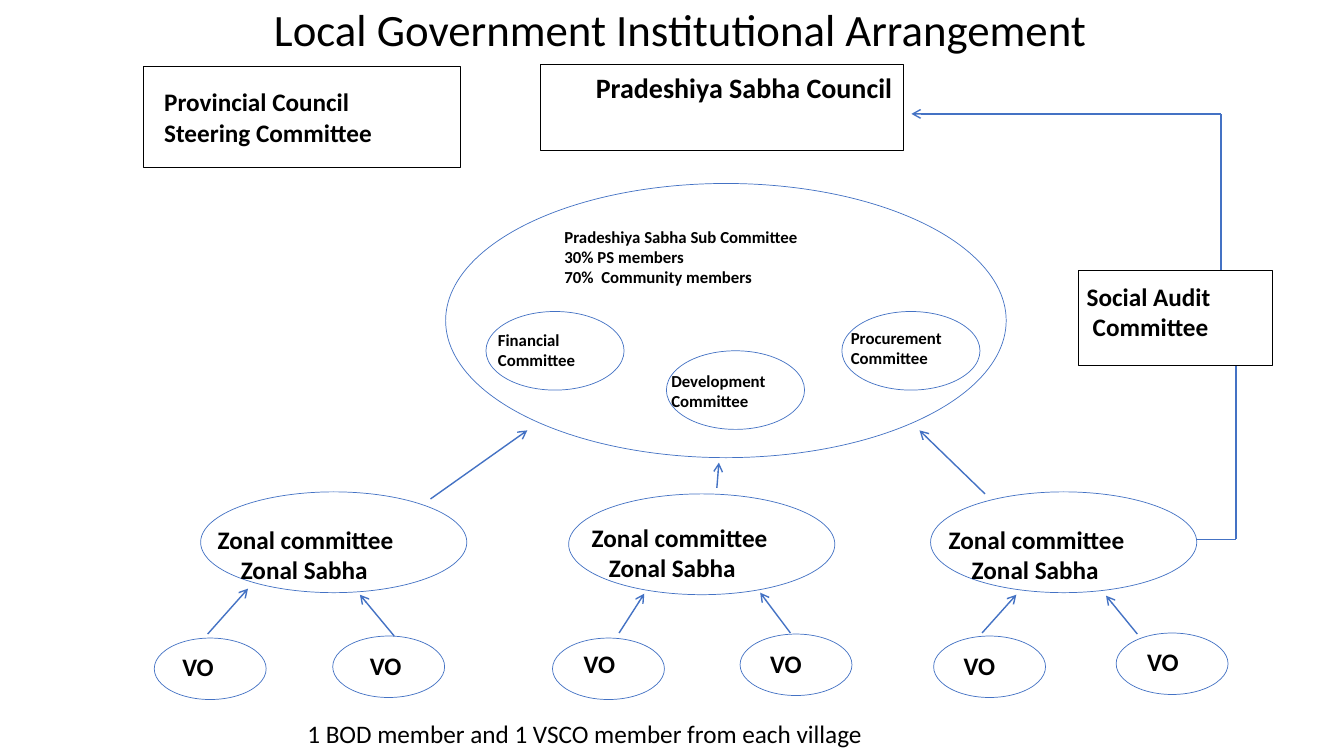
"""Build the local government institutional arrangement slide."""
from lxml import etree
from pptx import Presentation
from pptx.dml.color import RGBColor
from pptx.enum.shapes import MSO_CONNECTOR, MSO_SHAPE
from pptx.enum.text import MSO_ANCHOR, MSO_AUTO_SIZE, PP_ALIGN
from pptx.oxml.ns import qn
from pptx.util import Inches, Pt

BLACK = RGBColor(0x00, 0x00, 0x00)
BLUE = RGBColor(0x44, 0x72, 0xC4)
RECT, OVAL = MSO_SHAPE.RECTANGLE, MSO_SHAPE.OVAL
STRAIGHT = MSO_CONNECTOR.STRAIGHT
LEFT, CENTER = PP_ALIGN.LEFT, PP_ALIGN.CENTER
TOP, BOTTOM = MSO_ANCHOR.TOP, MSO_ANCHOR.BOTTOM
GROW, FIXED = MSO_AUTO_SIZE.SHAPE_TO_FIT_TEXT, MSO_AUTO_SIZE.NONE

prs = Presentation()
prs.slide_width, prs.slide_height = Inches(13.33), Inches(7.5)
slide = prs.slides.add_slide(prs.slide_layouts[6])


def add_text(text, box, size=18, bold=True, align=LEFT, anchor=TOP,
             wrap=False, fit=GROW, spacing=1.0, last_indent=0):
    frame = slide.shapes.add_textbox(*map(Inches, box)).text_frame
    frame.text = text
    frame.word_wrap = wrap
    frame.auto_size = fit
    frame.vertical_anchor = anchor
    for paragraph in frame.paragraphs:
        paragraph.alignment = align
        paragraph.line_spacing = spacing
        font = paragraph.runs[0].font
        font.name, font.size, font.bold = "Calibri", Pt(size), bold
        font.color.rgb = BLACK
    if last_indent:
        properties = frame.paragraphs[-1]._p.get_or_add_pPr()
        properties.set("marL", str(Inches(last_indent)))
        properties.set("indent", "0")


def add_outline(kind, box, color):
    outline = slide.shapes.add_shape(kind, *map(Inches, box))
    outline.shadow.inherit = False
    outline.fill.background()
    outline.line.color.rgb = color
    outline.line.width = Pt(0.5)


def add_link(start, end, arrow=True):
    link = slide.shapes.add_connector(STRAIGHT, *map(Inches, start + end))
    link.line.color.rgb = BLUE
    link.line.width = Pt(1)
    if arrow:
        etree.SubElement(link.line._get_or_add_ln(), qn("a:tailEnd"), type="arrow")
    etree.SubElement(link._element.spPr, qn("a:effectLst"))


add_text("Local Government Institutional Arrangement", (0.17, 0, 13.16, 0.61),
         size=32, bold=False, align=CENTER, anchor=BOTTOM, wrap=True,
         fit=FIXED, spacing=0.9)

for council_box in [(1.42, 0.66, 3.15, 1), (5.36, 0.64, 3.6, 0.85), (10.7, 2.68, 1.92, 0.95)]:
    add_outline(RECT, council_box, BLACK)
add_text("Provincial Council\nSteering Committee", (1.53, 0.81, 2.29, 0.71))
add_text("Pradeshiya Sabha Council", (5.8, 0.65, 3.16, 0.44), size=20, align=CENTER, wrap=True)
add_text("Social Audit\nCommittee", (10.68, 2.74, 1.44, 0.71), last_indent=0.06)

add_outline(OVAL, (4.42, 1.82, 5.56, 2.72), BLUE)
add_text("Pradeshiya Sabha Sub Committee\n30% PS members\n70%  Community members",
         (5.5, 2.2, 2.55, 0.71), size=12)

sub_committees = [
    ("Financial", 4.82, 3.09, (4.84, 3.22, 0.98, 0.5)),
    ("Development", 6.61, 3.48, (6.56, 3.63, 1.15, 0.5)),
    ("Procurement", 8.35, 3.09, (8.34, 3.2, 1.12, 0.5)),
]
for duty, left, top, label_box in sub_committees:
    add_outline(OVAL, (left, top, 1.37, 0.78), BLUE)
    add_text(f"{duty}\nCommittee", label_box, size=12)

zones = [
    (1.99, 4.88, 2.06, 5.15, 0.23),
    (5.64, 4.9, 5.77, 5.13, 0.17),
    (9.23, 4.88, 9.31, 5.15, 0.23),
]
for left, top, label_left, label_top, indent in zones:
    add_outline(OVAL, (left, top, 2.64, 1), BLUE)
    add_text("Zonal committee\nZonal Sabha", (label_left, label_top, 1.97, 0.71),
             last_indent=indent)

villages = [
    (1.53, 6.33, 1.71, 6.41), (3.3, 6.31, 3.57, 6.4),
    (5.48, 6.33, 5.69, 6.38), (7.34, 6.29, 7.54, 6.38),
    (9.26, 6.31, 9.46, 6.4), (11.07, 6.28, 11.28, 6.36),
]
for left, top, label_left, label_top in villages:
    add_outline(OVAL, (left, top, 1.11, 0.61), BLUE)
    add_text("VO", (label_left, label_top, 0.52, 0.4))

village_arrows = [
    ((2.06, 6.29), (2.46, 5.84)), ((3.91, 6.31), (3.57, 5.9)),
    ((6.14, 6.28), (6.39, 5.89)), ((7.84, 6.28), (7.54, 5.88)),
    ((9.74, 6.28), (10.08, 5.9)), ((11.28, 6.29), (10.97, 5.91)),
]
zone_arrows = [
    ((4.27, 4.95), (5.23, 4.27)), ((7.11, 4.84), (7.13, 4.59)), ((9.77, 4.9), (9.12, 4.27)),
]
for start, end in village_arrows + zone_arrows:
    add_link(start, end)

audit_route = [
    ((11.87, 5.35), (12.26, 5.35)), ((12.26, 5.35), (12.26, 3.63)),
    ((12.11, 2.68), (12.11, 1.13)), ((12.11, 1.13), (9.04, 1.13)),
]
for start, end in audit_route:
    add_link(start, end, arrow=(start, end) == audit_route[-1])

add_text("1 BOD member and 1 VSCO member from each village", (2.95, 7.08, 5.77, 0.4), bold=False)

prs.save("out.pptx")
